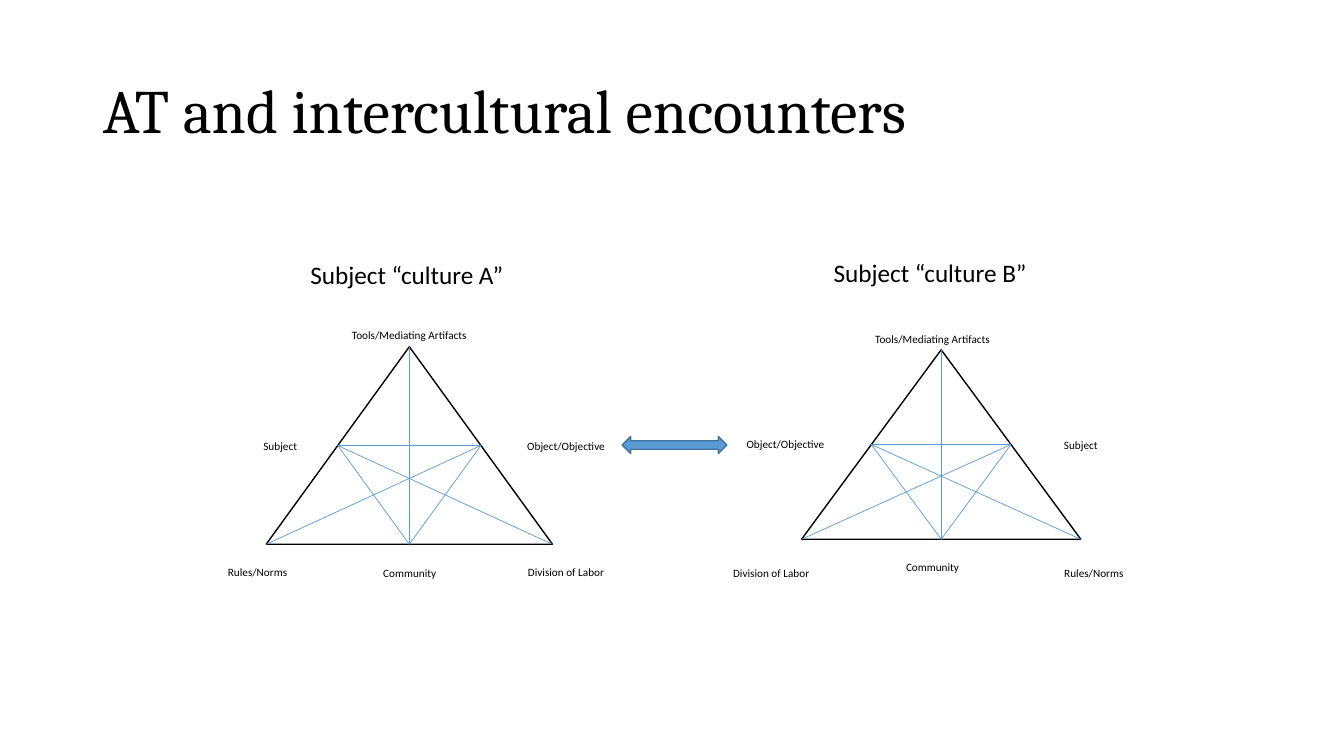
"""Build a slide of two mirrored activity triangles joined by a double arrow."""
from dataclasses import dataclass
from typing import Any

import lxml.etree
import pptx
import pptx.dml.color
import pptx.enum.shapes
import pptx.enum.text
import pptx.oxml.ns
import pptx.util

Inches = pptx.util.Inches
Align = pptx.enum.text.PP_ALIGN
Preset = pptx.enum.shapes.MSO_SHAPE


@dataclass(frozen=True)
class Theme:
    ink: str = "000000"
    accent: str = "5B9BD5"
    accent_edge: str = "43739E"
    title_font: str = "Cambria"
    body_font: str = "Calibri"
    title_size: float = 44
    heading_size: float = 18
    label_size: float = 8
    edge: float = 1
    hairline: float = 0.5


@dataclass(frozen=True)
class Label:
    text: str
    left: float
    top: float
    width: float
    height: float = 0.24


@dataclass(frozen=True)
class Triangle:
    left: float
    top: float
    width: float
    height: float
    heading: Label
    labels: tuple[Label, ...]


THEME = Theme()

TRIANGLES = (
    Triangle(2.64, 3.44, 2.84, 1.96, Label("Subject “culture A”", 2.98, 2.52, 2.25, 0.4), (
        Label("Tools/Mediating Artifacts", 3.25, 3.21, 1.62),
        Label("Subject", 2.48, 4.31, 0.6),
        Label("Object/Objective", 5, 4.31, 1.23),
        Label("Division of Labor", 5, 5.56, 1.23),
        Label("Community", 3.45, 5.57, 1.23),
        Label("Rules/Norms", 1.94, 5.56, 1.23),
    )),
    Triangle(7.95, 3.47, 2.77, 1.88, Label("Subject “culture B”", 8.17, 2.5, 2.25, 0.4), (
        Label("Tools/Mediating Artifacts", 8.46, 3.25, 1.58),
        Label("Subject", 10.42, 4.3, 0.6),
        Label("Object/Objective", 7.19, 4.29, 1.2),
        Label("Division of Labor", 7.05, 5.57, 1.2),
        Label("Community", 8.65, 5.51, 1.2),
        Label("Rules/Norms", 10.25, 5.57, 1.2),
    )),
)


def rgb(value: str) -> pptx.dml.color.RGBColor:
    return pptx.dml.color.RGBColor.from_string(value)


def set_all(target: Any, formats: dict[str, Any]) -> None:
    for name, value in formats.items():
        setattr(target, name, value)


def set_line(sp: Any, color: str, width: float) -> None:
    sp.line.color.rgb = rgb(color)
    sp.line.width = pptx.util.Pt(width)


def write(tf: Any, text: str, font: str, size: float, align: Align) -> None:
    p = tf.paragraphs[0]
    p.alignment = align
    r = p.add_run()
    r.text = text
    set_all(r.font, {"name": font, "size": pptx.util.Pt(size)})
    r.font.color.rgb = rgb(THEME.ink)


def add_title(s: Any, text: str) -> None:
    sp = s.shapes.title
    set_all(sp, {"left": Inches(0.92), "top": Inches(0.4),
                 "width": Inches(11.5), "height": Inches(1.45)})
    set_all(sp.text_frame, {"word_wrap": True,
                            "vertical_anchor": pptx.enum.text.MSO_ANCHOR.MIDDLE})
    write(sp.text_frame, text, THEME.title_font, THEME.title_size, Align.LEFT)
    sp.text_frame.paragraphs[0].line_spacing = 0.9


def add_label(shapes: Any, label: Label, size: float, align: Align) -> None:
    sp = shapes.add_textbox(Inches(label.left), Inches(label.top),
                            Inches(label.width), Inches(label.height))
    set_all(sp.text_frame, {"word_wrap": True,
                            "auto_size": pptx.enum.text.MSO_AUTO_SIZE.SHAPE_TO_FIT_TEXT})
    write(sp.text_frame, label.text, THEME.body_font, size, align)


def add_line(shapes: Any, start: tuple[float, float], end: tuple[float, float]) -> None:
    line = shapes.add_connector(pptx.enum.shapes.MSO_CONNECTOR.STRAIGHT,
                                *(Inches(v) for v in (*start, *end)))
    set_line(line, THEME.accent, THEME.hairline)
    lxml.etree.SubElement(line._element.spPr, pptx.oxml.ns.qn("a:effectLst"))


def add_triangle(s: Any, tri: Triangle) -> None:
    add_label(s.shapes, tri.heading, THEME.heading_size, Align.LEFT)
    shapes = s.shapes.add_group_shape().shapes
    sp = shapes.add_shape(Preset.ISOSCELES_TRIANGLE, Inches(tri.left), Inches(tri.top),
                          Inches(tri.width), Inches(tri.height))
    sp.shadow.inherit = False
    sp.fill.background()
    set_line(sp, THEME.ink, THEME.edge)
    for label in tri.labels:
        add_label(shapes, label, THEME.label_size, Align.CENTER)

    def point(x: float, y: float) -> tuple[float, float]:
        return tri.left + x * tri.width, tri.top + y * tri.height

    apex, base = point(0.5, 0), point(0.5, 1)
    left_mid, right_mid = point(0.25, 0.5), point(0.75, 0.5)
    for start, end in ((left_mid, base), (right_mid, base), (apex, base),
                       (left_mid, point(1, 1)), (right_mid, point(0, 1)),
                       (left_mid, right_mid)):
        add_line(shapes, start, end)


def add_double_arrow(s: Any) -> None:
    sp = s.shapes.add_shape(Preset.LEFT_RIGHT_ARROW, Inches(6.17), Inches(4.33),
                            Inches(1.04), Inches(0.17))
    sp.shadow.inherit = False
    sp.fill.solid()
    sp.fill.fore_color.rgb = rgb(THEME.accent)
    set_line(sp, THEME.accent_edge, THEME.edge)


def main() -> None:
    prs = pptx.Presentation()
    set_all(prs, {"slide_width": Inches(13.33), "slide_height": Inches(7.5)})
    s = prs.slides.add_slide(prs.slide_layouts.get_by_name("Title Only"))
    add_title(s, "AT and intercultural encounters")
    for tri in TRIANGLES:
        add_triangle(s, tri)
    add_double_arrow(s)
    prs.save("out.pptx")


if __name__ == "__main__":
    main()
